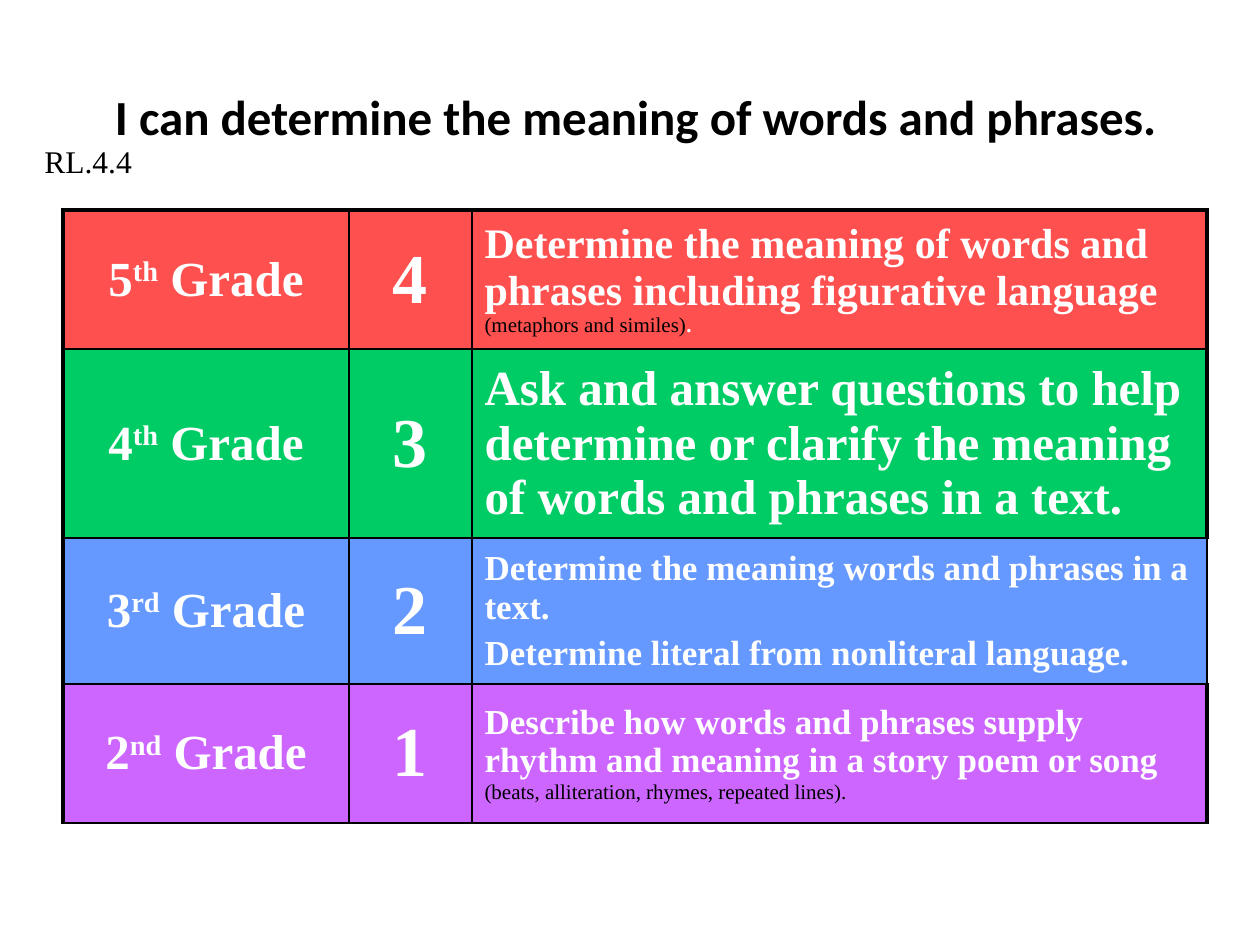
from lxml.etree import SubElement
from pptx import Presentation
from pptx.dml.color import RGBColor
from pptx.enum.text import MSO_ANCHOR, PP_ALIGN
from pptx.oxml.ns import qn
from pptx.util import Inches, Pt

BLACK = RGBColor(0, 0, 0)
WHITE = RGBColor(255, 255, 255)
RED = RGBColor(255, 80, 80)
GREEN = RGBColor(0, 204, 102)
BLUE = RGBColor(102, 153, 255)
PURPLE = RGBColor(204, 102, 255)

SCALE = Inches(1) / 126
SERIF = "Times New Roman"
BOLD = {"name": SERIF, "bold": True, "color": WHITE}
NOTE = {"size": Pt(12), "bold": False, "color": BLACK}
FRAME = (1, 2.25, 1.5, 1.5)


def px(count):
    """Turn pixels into EMU."""
    return round(count * SCALE)


def grade(digit, suffix):
    """Give the runs of an ordinal grade label."""
    big = {"size": Pt(28)}
    return [[(digit, big), (suffix, big | {"raise": 30}), (" Grade", big)]]


def score(digit):
    """Give the run of a score."""
    return [[(digit, {"size": Pt(40)})]]


class Board:
    """Style and current slide of the goal scale."""

    def __init__(self, deck):
        """Open a blank slide."""
        self.slide = deck.slides.add_slide(deck.slide_layouts[6])

    def fill(self, frame, paras, align, base):
        """Fill a text frame with paragraphs of styled runs."""
        for i, runs in enumerate(paras):
            para = frame.add_paragraph() if i else frame.paragraphs[0]
            para.alignment = align
            if i:
                para.space_before = Pt(4)
            for text, style in runs:
                run = para.add_run()
                run.text = text
                for key, value in (base | style).items():
                    if key == "color":
                        run.font.color.rgb = value
                    elif key == "raise":
                        run._r.get_or_add_rPr().set("baseline", str(value * 1000))
                    else:
                        setattr(run.font, key, value)

    def text(self, box, text, style, align, anchor):
        """Add a wrapped text box."""
        frame = self.slide.shapes.add_textbox(*map(px, box)).text_frame
        frame.word_wrap = True
        frame.vertical_anchor = anchor
        self.fill(frame, [[(text, {})]], align, style)

    def edge(self, cell, widths):
        """Draw the left, right, top and bottom cell borders."""
        props = cell._tc.get_or_add_tcPr()
        for side, width in zip("LRTB", widths):
            line = SubElement(props, qn(f"a:ln{side}"), w=str(int(Pt(width))))
            paint = SubElement(line, qn("a:solidFill"))
            SubElement(paint, qn("a:srgbClr"), val=str(BLACK))

    def table(self, box, cols, high, rows):
        """Add the scale table, one colour a row."""
        table = self.slide.shapes.add_table(len(rows), len(cols), *map(px, box)).table
        for col, wide in zip(table.columns, cols):
            col.width = px(wide)
        for row, tall, (color, edges, *texts) in zip(table.rows, high, rows):
            row.height = px(tall)
            for i, (cell, paras) in enumerate(zip(row.cells, texts)):
                self.edge(cell, edges[i])
                cell.fill.solid()
                cell.fill.fore_color.rgb = color
                cell.vertical_anchor = MSO_ANCHOR.MIDDLE
                align = PP_ALIGN.LEFT if i == 2 else PP_ALIGN.CENTER
                self.fill(cell.text_frame, paras, align, BOLD)


def main():
    """Build and save the slide."""
    deck = Presentation()
    deck.slide_width, deck.slide_height = px(1260), px(945)
    board = Board(deck)
    mid, large = {"size": Pt(20)}, {"size": Pt(24)}
    rows = [
        (RED, [(2.25, 1, 2.25, 1.5), (1, 1, 2.25, 1.5), (1, 2.25, 2.25, 1.5)],
         grade("5", "th"), score("4"),
         [[("Determine the meaning of words and phrases including figurative language ", large),
           ("(metaphors and similes)", NOTE), (".", {"size": Pt(12)})]]),
        (GREEN, [(2.25, 1, 1.5, 1), (1, 1, 1.5, 1), FRAME],
         grade("4", "th"), score("3"),
         [[("Ask and answer questions to help determine or clarify the meaning "
            "of words and phrases in a text.", {"size": Pt(28)})]]),
        (BLUE, [(2.25, 1.5, 1, 1), (1.5, 1.5, 1, 1), (1.5, 1.5, 1.5, 1.5)],
         grade("3", "rd"), score("2"),
         [[("Determine the meaning words and phrases in a text.", mid)],
          [("Determine literal from nonliteral language.", mid)]]),
        (PURPLE, [(2.25, 1, 1, 1.5), (1, 1, 1, 1.5), FRAME],
         grade("2", "nd"), score("1"),
         [[("Describe how words and phrases supply rhythm and meaning "
            "in a story poem or song ", mid),
           ("(beats, alliteration, rhymes, repeated lines).", NOTE)]]),
    ]
    board.text((53, 53, 1165, 126), "I can determine the meaning of words and phrases.",
               {"name": "Calibri", "size": Pt(28), "bold": True, "color": BLACK},
               PP_ALIGN.CENTER, MSO_ANCHOR.MIDDLE)
    board.table((63, 210, 1144, 577), (286, 123, 735), (139, 160, 139, 139), rows)
    board.text((32, 136, 179, 50), "RL.4.4",
               {"name": SERIF, "size": Pt(18), "color": BLACK},
               PP_ALIGN.LEFT, MSO_ANCHOR.TOP)
    deck.save("out.pptx")


if __name__ == "__main__":
    main()
